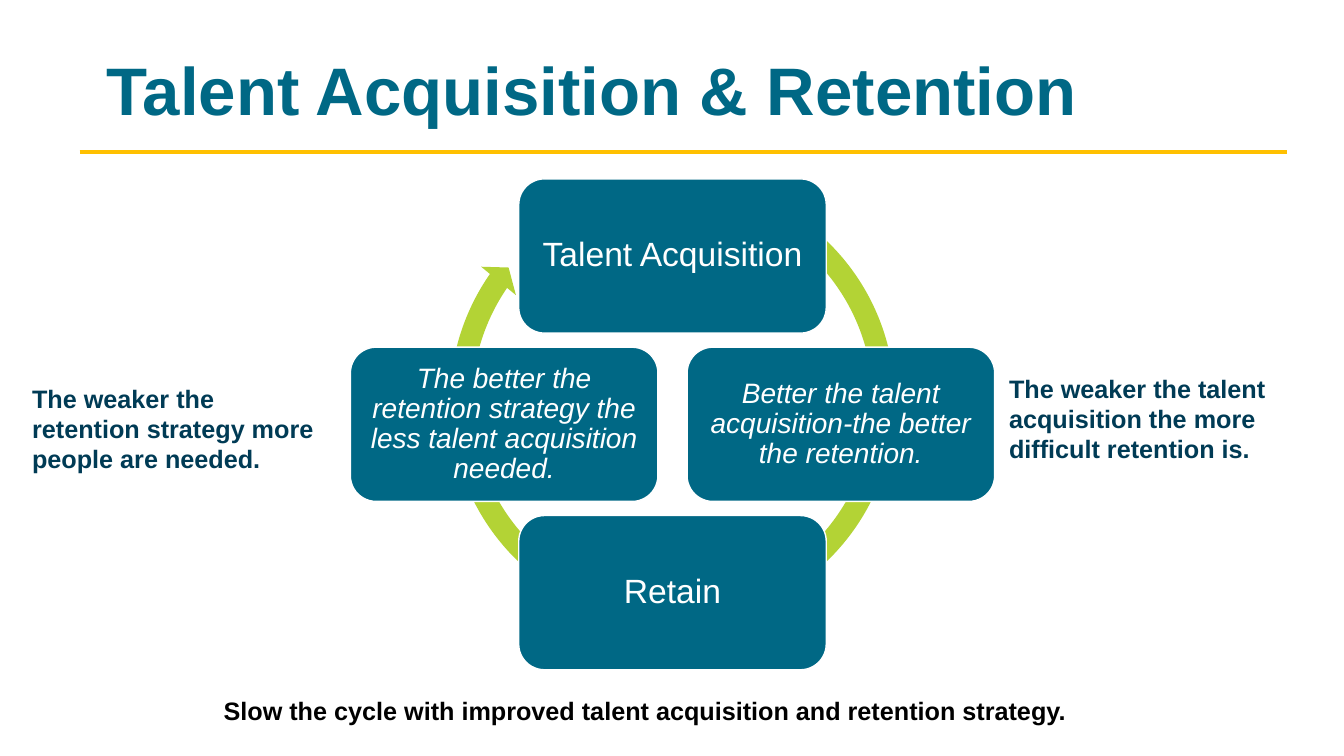
"""Build the talent acquisition and retention cycle slide."""
import lxml.etree
import pptx
import pptx.dml.color
import pptx.enum.shapes
import pptx.enum.text
import pptx.oxml.ns
import pptx.util

Inches = pptx.util.Inches
Pt = pptx.util.Pt
RGBColor = pptx.dml.color.RGBColor
MSO_SHAPE = pptx.enum.shapes.MSO_SHAPE
MSO_ANCHOR = pptx.enum.text.MSO_ANCHOR

TEAL = RGBColor(0x00, 0x68, 0x85)
NAVY = RGBColor(0x00, 0x3B, 0x55)
GOLD = RGBColor(0xFF, 0xC0, 0x00)
LIME = RGBColor(0xB3, 0xD3, 0x35)
WHITE = RGBColor(0xFF, 0xFF, 0xFF)
BLACK = RGBColor(0x00, 0x00, 0x00)

CENTER_X, CENTER_Y = 6.67, 4.21
STEP = 1.67
STAGE_WIDTH, STAGE_HEIGHT = 3.05, 1.53
RING = 4.64


def style_text(frame, text, size, color, bold=False, italic=False):
    """Write one wrapped paragraph in the slide's font."""
    frame.word_wrap = True
    frame.text = text
    font = frame.paragraphs[0].runs[0].font
    font.name = "Arial"
    font.size = Pt(size)
    font.bold = bold
    font.italic = italic
    font.color.rgb = color


def add_label(slide, box, text, size, color):
    """Add a bold text box and return its text frame."""
    frame = slide.shapes.add_textbox(*map(Inches, box)).text_frame
    style_text(frame, text, size, color, bold=True)
    return frame


def add_title(slide, text):
    """Add the title and the gold rule below it."""
    title = add_label(slide, (0.96, 0.47, 11.42, 0.87), text, 48, TEAL)
    title.vertical_anchor = MSO_ANCHOR.BOTTOM
    title.paragraphs[0].line_spacing = 0.9
    rule = slide.shapes.add_connector(
        pptx.enum.shapes.MSO_CONNECTOR.STRAIGHT,
        Inches(0.79), Inches(1.51), Inches(12.76), Inches(1.51))
    rule.line.color.rgb = GOLD
    rule.line.width = Pt(3)
    properties = rule._element.spPr
    lxml.etree.SubElement(properties, pptx.oxml.ns.qn("a:effectLst"))


def add_cycle_arrow(slide):
    """Add the circular arrow behind the stages."""
    arrow = slide.shapes.add_shape(
        MSO_SHAPE.CIRCULAR_ARROW, Inches(CENTER_X - RING / 2),
        Inches(1.66), Inches(RING), Inches(RING))
    for index, value in enumerate((0.047, 2.729, 128.791, 179.984, 0.048)):
        arrow.adjustments[index] = value
    arrow.shadow.inherit = False
    arrow.fill.solid()
    arrow.fill.fore_color.rgb = LIME
    arrow.line.fill.background()


def add_stage(slide, column, row, text, size, inset, italic):
    """Add a rounded stage a number of steps away from the cycle's center."""
    stage = slide.shapes.add_shape(
        MSO_SHAPE.ROUNDED_RECTANGLE,
        Inches(CENTER_X + column * STEP - STAGE_WIDTH / 2),
        Inches(CENTER_Y + row * STEP - STAGE_HEIGHT / 2),
        Inches(STAGE_WIDTH), Inches(STAGE_HEIGHT))
    stage.shadow.inherit = False
    stage.fill.solid()
    stage.fill.fore_color.rgb = TEAL
    stage.line.color.rgb = WHITE
    stage.line.width = Pt(1)
    frame = stage.text_frame
    frame.margin_left = frame.margin_right = Inches(inset)
    frame.margin_top = frame.margin_bottom = Inches(inset)
    frame.vertical_anchor = MSO_ANCHOR.MIDDLE
    style_text(frame, text, size, WHITE, italic=italic)
    frame.paragraphs[0].alignment = pptx.enum.text.PP_ALIGN.CENTER
    frame.paragraphs[0].line_spacing = 0.9


def main():
    """Assemble and save the slide."""
    deck = pptx.Presentation()
    deck.slide_width, deck.slide_height = Inches(13.33), Inches(7.5)
    slide = deck.slides.add_slide(deck.slide_layouts[6])

    add_title(slide, "Talent Acquisition & Retention")
    add_cycle_arrow(slide)
    stages = (
        (0, -1, "Talent Acquisition", 24, 0.1, False),
        (1, 0, "Better the talent acquisition-the better the retention.",
         20, 0.08, True),
        (0, 1, "Retain", 24, 0.1, False),
        (-1, 0, "The better the retention strategy the less talent "
         "acquisition needed.", 20, 0.08, True),
    )
    for stage in stages:
        add_stage(slide, *stage)

    add_label(slide, (9.91, 3.65, 3.42, 1.01),
              "The weaker the talent acquisition the more difficult "
              "retention is.", 18, NAVY)
    add_label(slide, (0.22, 3.75, 3.04, 1.31),
              "The weaker the retention strategy more people are needed.",
              18, NAVY)
    add_label(slide, (2.12, 6.85, 8.66, 0.4),
              "Slow the cycle with improved talent acquisition and "
              "retention strategy.", 18, BLACK)
    deck.save("out.pptx")


if __name__ == "__main__":
    main()
